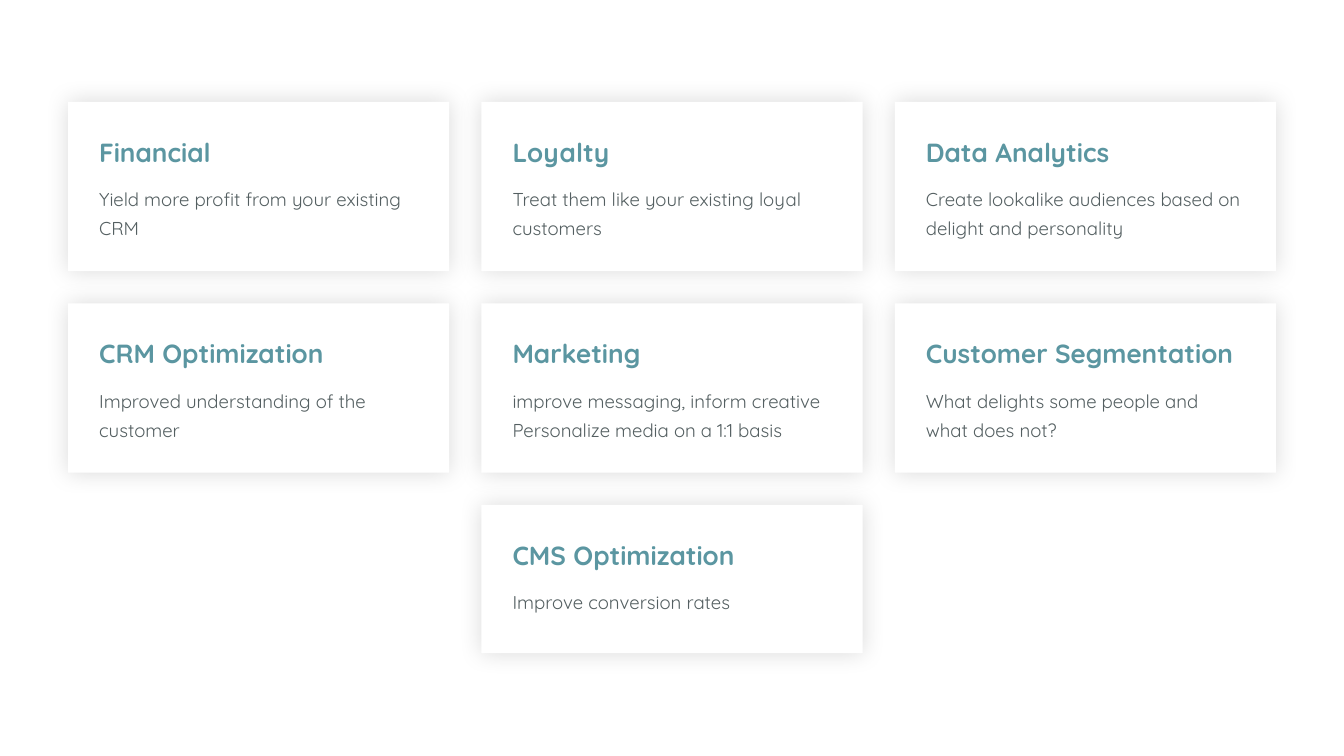
"""Build a slide of seven shadowed cards, each with a heading and a short description."""
from dataclasses import dataclass

from lxml import etree
from pptx import Presentation
from pptx.dml.color import RGBColor
from pptx.enum import shapes, text
from pptx.oxml import ns
from pptx.util import Inches, Pt

CARDS = [
    {"column": 0, "row": 0, "heading": "Financial",
     "detail": "Yield more profit from your existing CRM"},
    {"column": 1, "row": 0, "heading": "Loyalty",
     "detail": "Treat them like your existing loyal customers"},
    {"column": 2, "row": 0, "heading": "Data Analytics",
     "detail": "Create lookalike audiences based on delight and personality"},
    {"column": 0, "row": 1, "heading": "CRM Optimization",
     "detail": "Improved understanding of the customer"},
    {"column": 1, "row": 1, "heading": "Marketing",
     "detail": "improve messaging, inform creative Personalize media on a 1:1 basis",
     "detail_width": 3.57},
    {"column": 2, "row": 1, "heading": "Customer Segmentation",
     "detail": "What delights some people and what does not?"},
    {"column": 1, "row": 2, "heading": "CMS Optimization",
     "detail": "Improve conversion rates", "height": 1.47, "detail_height": 0.36},
]

SLIDE_WIDTH, SLIDE_HEIGHT = 13.33, 7.5
CARD_WIDTH, CARD_HEIGHT = 3.78, 1.68
COLUMN_PITCH, ROW_PITCH = 4.1, 2.0
FIRST_TOP = 1.01
INSET = 0.21
HEADING_OFFSET, HEADING_HEIGHT = 0.29, 0.42
DETAIL_OFFSET, DETAIL_HEIGHT = 0.74, 0.65


@dataclass(frozen=True)
class Theme:
    """Colours and type of the slide."""
    font: str = "Quicksand"
    card: str = "FFFFFF"
    heading: str = "5B96A1"
    detail: str = "545F61"
    shadow: str = "000000"
    shadow_opacity: int = 15
    shadow_blur: int = 17
    heading_size: float = 18.7
    detail_size: float = 13.3


THEME = Theme()


def add_soft_shadow(box):
    """Give a shape an even shadow on all sides."""
    box.shadow.inherit = False
    effects = box._element.spPr.find(ns.qn("a:effectLst"))
    shadow = etree.SubElement(effects, ns.qn("a:outerShdw"), {
        "blurRad": str(Pt(THEME.shadow_blur)), "dist": "0",
        "algn": "ctr", "rotWithShape": "0"})
    colour = etree.SubElement(shadow, ns.qn("a:srgbClr"), val=THEME.shadow)
    etree.SubElement(colour, ns.qn("a:alpha"), val=str(THEME.shadow_opacity * 1000))


def add_panel(page, left, top, height):
    """Add the white panel of a card."""
    box = page.shapes.add_shape(
        shapes.MSO_SHAPE.RECTANGLE, Inches(left), Inches(top),
        Inches(CARD_WIDTH), Inches(height))
    box.fill.solid()
    box.fill.fore_color.rgb = RGBColor.from_string(THEME.card)
    box.line.fill.background()
    add_soft_shadow(box)


def add_text(page, words, left, top, width, height, size, colour, bold=False, spacing=None):
    """Add a wrapped text box with one formatted paragraph."""
    box = page.shapes.add_textbox(Inches(left), Inches(top), Inches(width), Inches(height))
    frame = box.text_frame
    frame.word_wrap = True
    frame.auto_size = text.MSO_AUTO_SIZE.SHAPE_TO_FIT_TEXT
    frame.text = words
    para = frame.paragraphs[0]
    para.line_spacing = spacing
    font = para.runs[0].font
    font.name, font.size, font.bold = THEME.font, Pt(size), bold
    font.color.rgb = RGBColor.from_string(colour)


def add_card(page, card):
    """Place one card on the centred grid."""
    left = (SLIDE_WIDTH - CARD_WIDTH) / 2 + (card["column"] - 1) * COLUMN_PITCH
    top = FIRST_TOP + card["row"] * ROW_PITCH
    text_left, text_width = left + INSET, CARD_WIDTH - 2 * INSET
    add_panel(page, left, top, card.get("height", CARD_HEIGHT))
    add_text(page, card["detail"], text_left, top + DETAIL_OFFSET,
             card.get("detail_width", text_width), card.get("detail_height", DETAIL_HEIGHT),
             THEME.detail_size, THEME.detail, spacing=1.3)
    add_text(page, card["heading"], text_left, top + HEADING_OFFSET,
             CARD_WIDTH - INSET, HEADING_HEIGHT,
             THEME.heading_size, THEME.heading, bold=True)


def main():
    """Create and save the deck."""
    deck = Presentation()
    deck.slide_width, deck.slide_height = Inches(SLIDE_WIDTH), Inches(SLIDE_HEIGHT)
    page = deck.slides.add_slide(deck.slide_layouts[6])
    for card in CARDS:
        add_card(page, card)
    deck.save("out.pptx")


if __name__ == "__main__":
    main()
